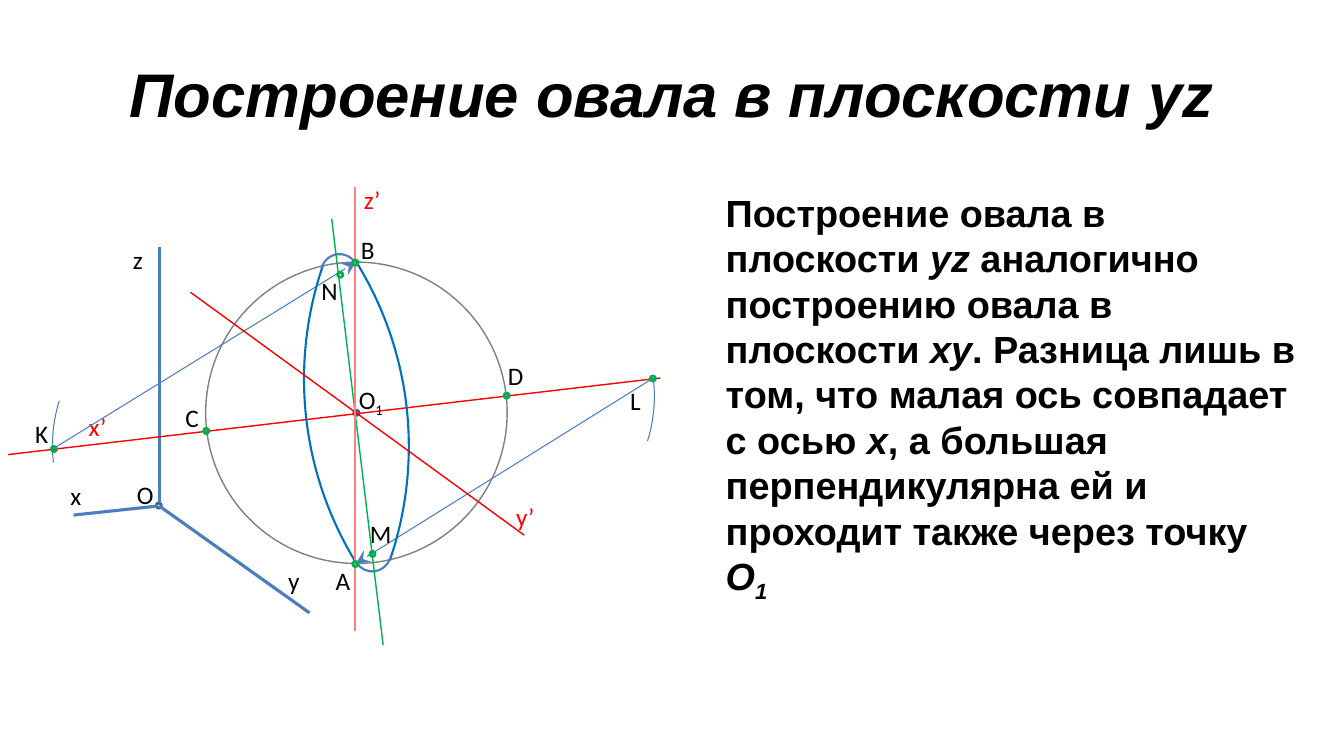
from dataclasses import dataclass

from lxml import etree
from pptx import Presentation
from pptx.dml.color import RGBColor
from pptx.enum.shapes import MSO_CONNECTOR, MSO_SHAPE
from pptx.enum.text import MSO_ANCHOR, MSO_AUTO_SIZE, PP_ALIGN
from pptx.oxml.ns import qn
from pptx.util import Emu, Pt

STRAIGHT = MSO_CONNECTOR.STRAIGHT
OVAL, ARC = MSO_SHAPE.OVAL, MSO_SHAPE.ARC
TOP, MIDDLE = MSO_ANCHOR.TOP, MSO_ANCHOR.MIDDLE
LEFT, CENTER = PP_ALIGN.LEFT, PP_ALIGN.CENTER
GROW, FIXED = MSO_AUTO_SIZE.SHAPE_TO_FIT_TEXT, MSO_AUTO_SIZE.NONE

BLACK = RGBColor(0x00, 0x00, 0x00)
RED = RGBColor(0xFF, 0x00, 0x00)
PALE_RED = RGBColor(0xFF, 0x7F, 0x7F)
GREEN = RGBColor(0x00, 0xB0, 0x50)
GRAY = RGBColor(0x80, 0x80, 0x80)
BLUE = RGBColor(0x4B, 0x7E, 0xBC)
DARK_BLUE = RGBColor(0x3A, 0x5F, 0x8C)
OVAL_BLUE = RGBColor(0x00, 0x70, 0xC0)

PX = 9144  # 100 px to the inch
DOT_SIZE = 5
LABEL_HEIGHT = 40
TILT, OPPOSITE_TILT = 263.3, 83.3

# Start and end of each kind of arc, in degrees
COMPASS_MARK = (270, 293.87)
OVAL_SIDE = (65.28, 115.32)
OVAL_CAP = (293.48, 59.32)


@dataclass(frozen=True)
class Line:
    start: tuple[int, int]
    end: tuple[int, int]
    color: RGBColor
    weight: float
    arrow: str = ""


@dataclass(frozen=True)
class Curve:
    left: int
    top: int
    width: int
    height: int
    color: RGBColor
    weight: float
    rotation: float = TILT
    angles: tuple[float, ...] = ()


@dataclass(frozen=True)
class Run:
    text: str
    italic: bool = False
    subscript: bool = False


@dataclass(frozen=True)
class Text:
    left: int
    top: int
    width: int
    height: int
    runs: tuple[Run, ...]
    font: dict
    frame: dict
    align: PP_ALIGN = LEFT


def label(left: int, top: int, width: int, text: str,
          color: RGBColor = BLACK, index: str = "") -> Text:
    runs = (Run(text),) + ((Run(index, subscript=True),) if index else ())
    return Text(left, top, width, LABEL_HEIGHT, runs,
                {"name": "Calibri", "size": Pt(18), "color": color},
                {"word_wrap": False, "auto_size": GROW})


def dot(left: int, top: int, color: RGBColor = GREEN) -> Curve:
    return Curve(left, top, DOT_SIZE, DOT_SIZE, color, 2)


HEADING_FRAME = {"word_wrap": True, "auto_size": FIXED}
TITLE = Text(
    67, 30, 1200, 125, (Run("Построение овала в плоскости yz", italic=True),),
    {"name": "Arial", "size": Pt(44), "bold": True, "color": BLACK},
    HEADING_FRAME | {"vertical_anchor": MIDDLE}, CENTER)
BODY = Text(
    710, 183, 587, 308,
    (Run("Построение овала в плоскости "), Run("yz", True),
     Run(" аналогично построению овала в плоскости "), Run("xy", True),
     Run(". Разница лишь в том, что малая ось совпадает с осью "), Run("x", True),
     Run(", а большая перпендикулярна ей и проходит также через точку "),
     Run("О", True), Run("1", True, True)),
    {"name": "Arial", "size": Pt(27), "bold": True, "color": BLACK},
    HEADING_FRAME | {"vertical_anchor": TOP})

# Everything in the drawing, from back to front
DRAWING = (
    # Coordinate axes
    dot(155, 499, DARK_BLUE),
    Line((158, 499), (158, 245), BLUE, 2.25),
    label(122, 237, 30, "z"),
    label(126, 471, 37, "O"),
    Line((157, 502), (73, 511), BLUE, 2.25),
    Line((158, 502), (307, 608), BLUE, 2.25),
    label(60, 472, 31, "х"),
    label(276, 556, 32, "у"),
    # Circle with its centre and labels
    dot(351, 407, DARK_BLUE),
    Line((655, 375), (8, 451), RED, 1),
    Curve(204, 260, 299, 299, GRAY, 1),
    label(348, 228, 34, "В"),
    label(323, 556, 35, "А"),
    label(346, 376, 45, "О", index="1"),
    label(502, 492, 39, "y’", RED),
    label(351, 178, 37, "z’", RED),
    label(78, 403, 38, "x’", RED),
    dot(500, 390),
    dot(202, 425),
    label(174, 394, 34, "C"),
    label(494, 353, 36, "D"),
    # Compass marks, radii from K and L, long sides of the oval
    Curve(53, 292, 297, 299, BLUE, 0.75, TILT, COMPASS_MARK),
    dot(51, 443),
    label(25, 410, 33, "K"),
    Line((353, 559), (648, 375), BLUE, 0.75, "headEnd"),
    Line((53, 445), (353, 260), BLUE, 0.75, "tailEnd"),
    Curve(-297, 91, 700, 705, OVAL_BLUE, 1.5, TILT, OVAL_SIDE),
    Curve(304, 23, 700, 705, OVAL_BLUE, 1.5, OPPOSITE_TILT, OVAL_SIDE),
    Curve(351, 244, 297, 299, BLUE, 0.75, OPPOSITE_TILT, COMPASS_MARK),
    label(615, 377, 31, "L"),
    dot(645, 373),
    # End caps of the oval
    dot(335, 270),
    dot(367, 547),
    Curve(317, 253, 40, 38, BLUE, 1.5, TILT, OVAL_CAP),
    label(309, 268, 36, "N"),
    label(357, 509, 42, "М"),
    Curve(349, 528, 40, 38, BLUE, 1.5, OPPOSITE_TILT, OVAL_CAP),
    # Axes through the centre and points B and A
    Line((189, 290), (520, 531), RED, 1),
    Line((329, 217), (380, 640), GREEN, 1),
    Line((352, 626), (352, 186), PALE_RED, 1),
    dot(350, 258),
    dot(350, 557),
)


def px(*values: int) -> list[Emu]:
    return [Emu(value * PX) for value in values]


def draw_line(slide, line: Line) -> None:
    shape = slide.shapes.add_connector(STRAIGHT, *px(*line.start, *line.end))
    shape.line.color.rgb = line.color
    shape.line.width = Pt(line.weight)
    if line.arrow:
        outline = shape.line._get_or_add_ln()
        etree.SubElement(outline, qn(f"a:{line.arrow}"), type="stealth", w="lg", len="lg")
    etree.SubElement(shape._element.spPr, qn("a:effectLst"))


def draw_curve(slide, curve: Curve) -> None:
    box = px(curve.left, curve.top, curve.width, curve.height)
    shape = slide.shapes.add_shape(ARC if curve.angles else OVAL, *box)
    for index, angle in enumerate(curve.angles):
        shape.adjustments[index] = angle * 0.6  # 60000 units a degree, over 100000
    shape.rotation = curve.rotation
    shape.shadow.inherit = False
    shape.fill.background()
    shape.line.color.rgb = curve.color
    shape.line.width = Pt(curve.weight)


def draw_text(slide, text: Text) -> None:
    shape = slide.shapes.add_textbox(*px(text.left, text.top, text.width, text.height))
    for name, value in text.frame.items():
        setattr(shape.text_frame, name, value)
    paragraph = shape.text_frame.paragraphs[0]
    paragraph.alignment = text.align
    for item in text.runs:
        run = paragraph.add_run()
        run.text = item.text
        for name, value in (text.font | {"italic": item.italic}).items():
            if name == "color":
                run.font.color.rgb = value
            else:
                setattr(run.font, name, value)
        if item.subscript:
            run.font._element.set("baseline", "-25000")


def main() -> None:
    presentation = Presentation()
    presentation.slide_width, presentation.slide_height = px(1333, 750)
    slide = presentation.slides.add_slide(presentation.slide_layouts[6])
    draw = {Line: draw_line, Curve: draw_curve, Text: draw_text}
    for part in (TITLE, BODY, *DRAWING):
        draw[type(part)](slide, part)
    presentation.save("out.pptx")


if __name__ == "__main__":
    main()
